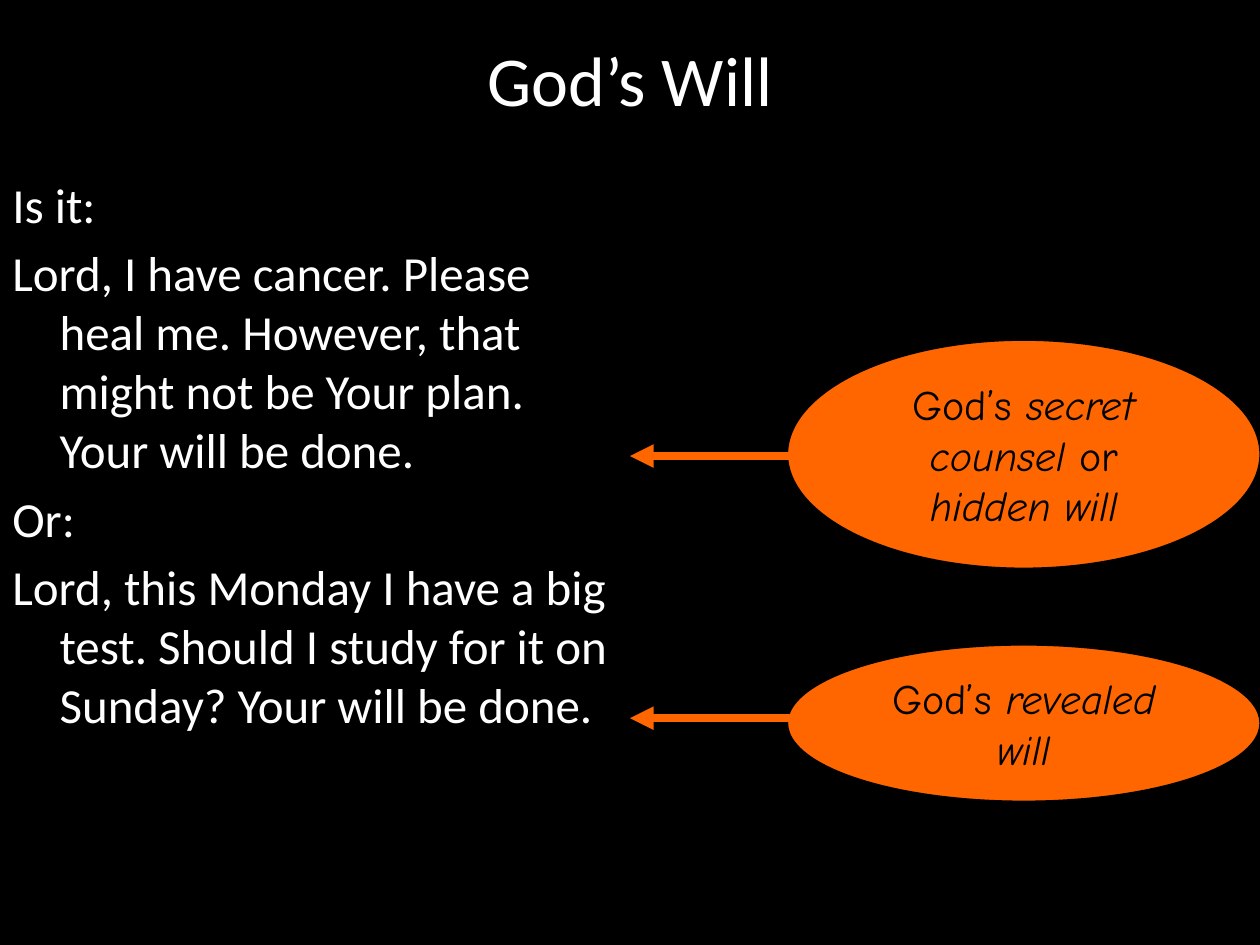
from lxml import etree
from pptx import Presentation
from pptx.dml.color import RGBColor
from pptx.enum import shapes, text
from pptx.oxml import ns
from pptx.util import Pt

COLORS = {"background": "000000", "light": "FFFFFF", "dark": "000000", "accent": "FF6600"}
HANGING = Pt(27)
PRAYERS = [
    "Is it:",
    "Lord, I have cancer. Please heal me. However, that might not be Your plan. "
    "Your will be done.",
    "Or:",
    "Lord, this Monday I have a big test. Should I study for it on Sunday? "
    "Your will be done.",
]
# Ellipse top and height, arrow height on the slide, (wording, italic) pieces
ANSWERS = [
    (368.6, 89.3, 410.4, [("God’s ", False), ("revealed will", True)]),
    (194.4, 130.3, 260.6, [("God’s ", False), ("secret counsel ", True),
                           ("or ", False), ("hidden will", True)]),
]


def color(name):
    return RGBColor.from_string(COLORS[name])


def style(font, face, size, color_name):
    font.name, font.size = face, Pt(size)
    font.color.rgb = color(color_name)


def add_text(slide, box, lines, size):
    """Add a wrapped text box with one paragraph per line."""
    frame = slide.shapes.add_textbox(*map(Pt, box)).text_frame
    frame.word_wrap = True
    frame.text = "\n".join(lines)
    for paragraph in frame.paragraphs:
        style(paragraph.runs[0].font, "Calibri", size, "light")
    return frame


def add_title(slide):
    frame = add_text(slide, (0, 0, 720, 90), ["God’s Will"], 40)
    frame.vertical_anchor = text.MSO_ANCHOR.MIDDLE
    frame.paragraphs[0].alignment = text.PP_ALIGN.CENTER


def add_prayers(slide):
    frame = add_text(slide, (0, 96, 360, 444), PRAYERS, 28)
    for paragraph in frame.paragraphs:
        paragraph.space_before = Pt(5.6)
        properties = paragraph._p.get_or_add_pPr()
        properties.set("marL", str(HANGING))
        properties.set("indent", str(-HANGING))


def add_answer(slide, top, height, pieces):
    ellipse = slide.shapes.add_shape(
        shapes.MSO_SHAPE.OVAL, Pt(450), Pt(top), Pt(270), Pt(height))
    ellipse.shadow.inherit = False
    ellipse.fill.solid()
    ellipse.fill.fore_color.rgb = color("accent")
    ellipse.line.color.rgb = color("dark")
    ellipse.line.width = Pt(0.75)
    frame = ellipse.text_frame
    frame.word_wrap = True
    frame.auto_size = text.MSO_AUTO_SIZE.SHAPE_TO_FIT_TEXT
    frame.vertical_anchor = text.MSO_ANCHOR.MIDDLE
    paragraph = frame.paragraphs[0]
    paragraph.alignment = text.PP_ALIGN.CENTER
    for wording, italic in pieces:
        run = paragraph.add_run()
        run.text = wording
        style(run.font, "Comic Neue", 24, "dark")
        run.font.italic = italic


def add_arrow(slide, y):
    arrow = slide.shapes.add_connector(
        shapes.MSO_CONNECTOR.STRAIGHT, Pt(456), Pt(y), Pt(360), Pt(y))
    arrow.line.color.rgb = color("accent")
    arrow.line.width = Pt(4.5)
    etree.SubElement(arrow.line._get_or_add_ln(), ns.qn("a:tailEnd"), type="triangle")
    etree.SubElement(arrow._element.spPr, ns.qn("a:effectLst"))


def main():
    deck = Presentation()
    deck.slide_width, deck.slide_height = Pt(720), Pt(540)
    slide = deck.slides.add_slide(deck.slide_layouts[6])
    slide.background.fill.solid()
    slide.background.fill.fore_color.rgb = color("background")
    add_title(slide)
    add_prayers(slide)
    for top, height, arrow_y, pieces in ANSWERS:
        add_answer(slide, top, height, pieces)
        add_arrow(slide, arrow_y)
    deck.save("out.pptx")


if __name__ == "__main__":
    main()
